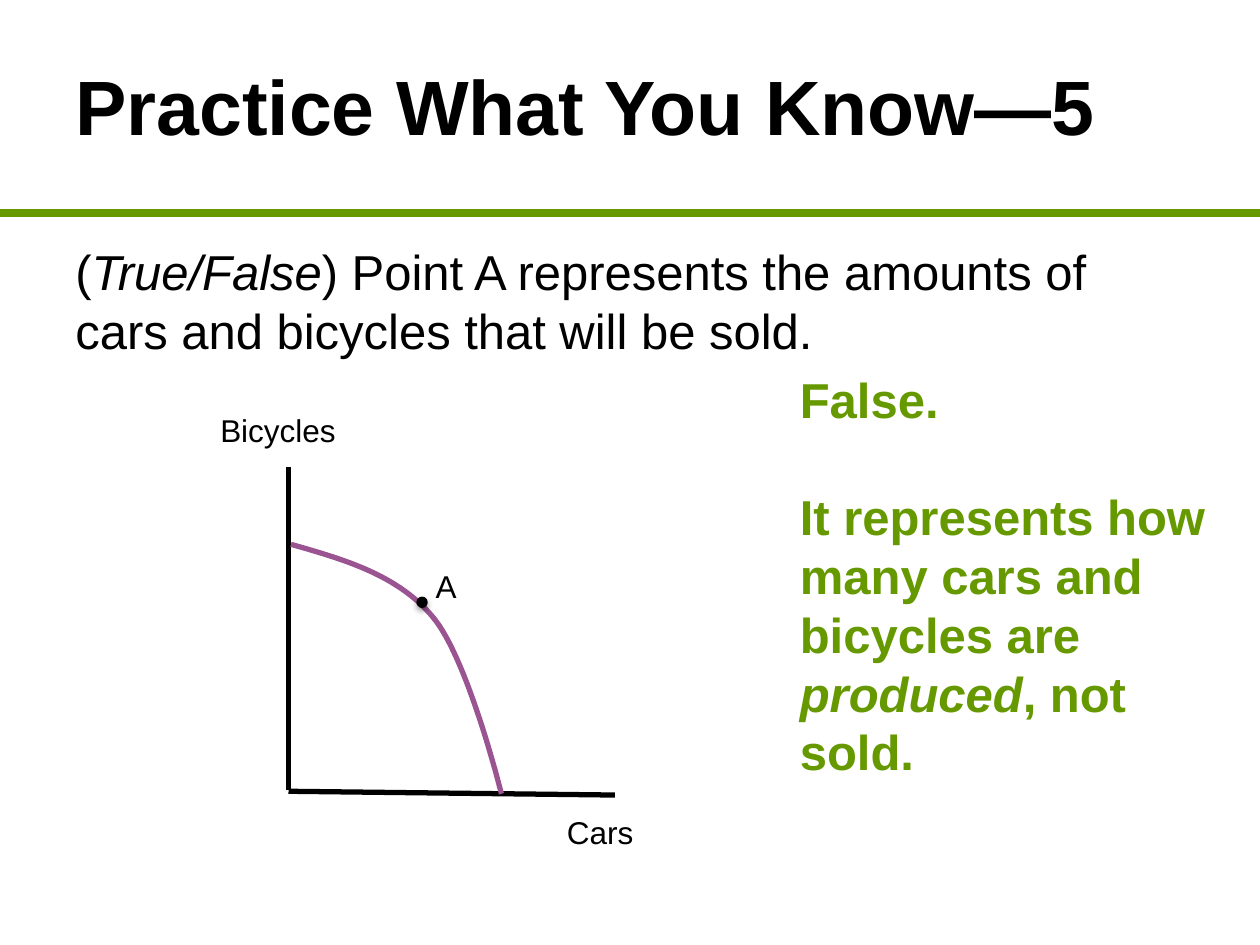
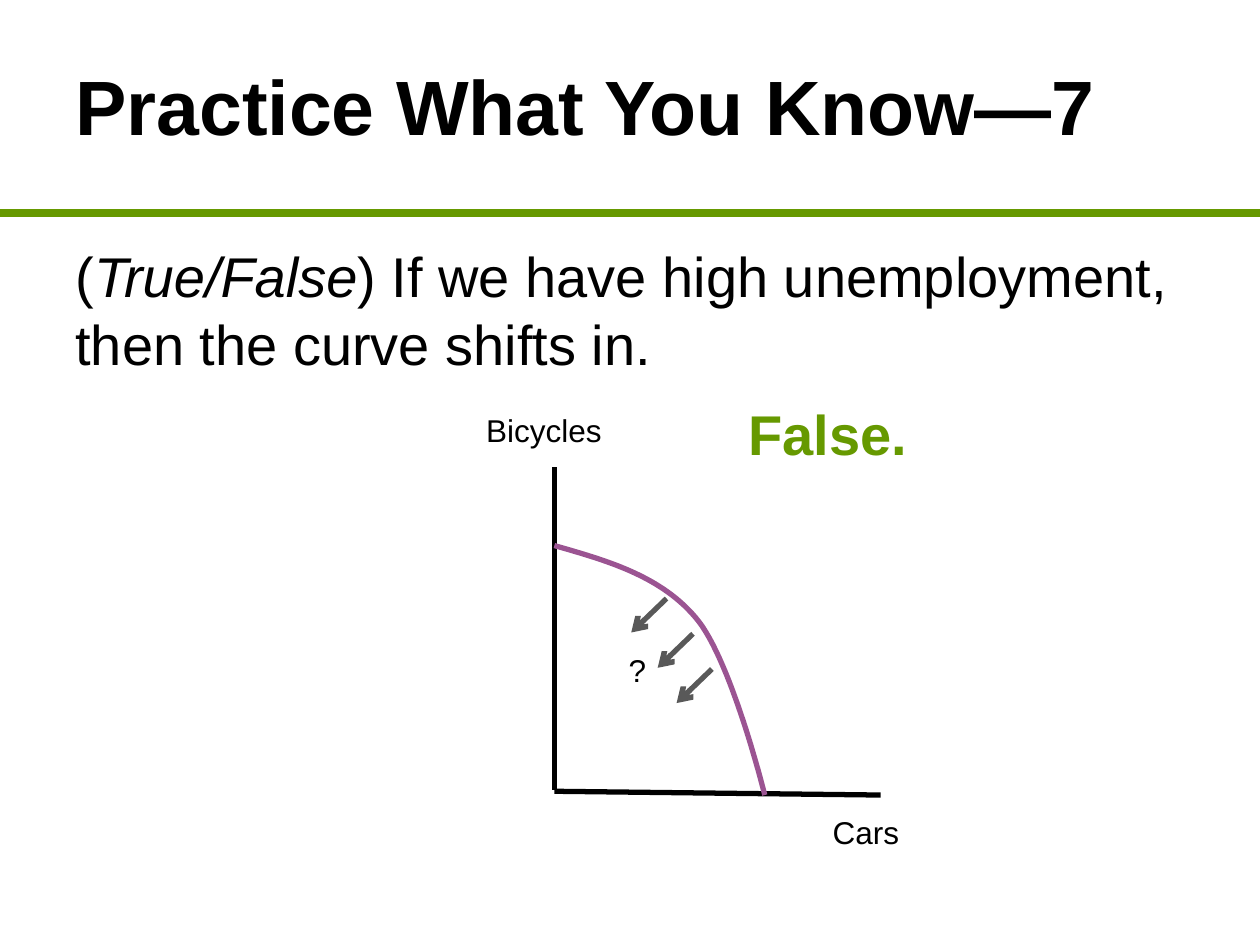
import pptx
import pptx.util
import pptx.dml.color
import pptx.enum.shapes
import pptx.enum.text
import pptx.oxml
import pptx.oxml.ns
from pptx.util import Inches

# Shared look
FONT = "Arial"
BLACK, GREEN, PURPLE, GREY = "000000", "669900", "9B5492", "595959"
SLIDE_W, SLIDE_H = 10, 7.5
MARGIN = 0.5
RULE_Y = 1.69
AXIS_TOP, AXIS_BOTTOM = 3.71, 6.27
CURVE_BEZIERS = [  # control points measured from the start of the curve
    [(0, 0), (0.42, 0.12), (0.84, 0.24), (1.12, 0.57)],
    [(1.12, 0.57), (1.4, 0.89), (1.67, 1.98), (1.67, 1.98)],
]
CURVE_STEPS = 30
ARROW_SHIFT = (-0.28, 0.27)

# Content: runs are (text, italic)
SLIDES = [
    {
        "title": "Practice What You Know—5",
        "question": [("(", False), ("True/False", True),
                     (") Point A represents the amounts of cars and bicycles "
                      "that will be sold.", False)],
        "question_height": 1.12,
        "text_size": 28,
        "answer": [[("False.", False)],
                   [("It represents how many cars and bicycles are ", False),
                    ("produced", True), (", not sold.", False)]],
        "answer_box": (6.25, 2.88, 3.72, 3.4),
        "axis_x": 2.29,
        "curve_start": (2.31, 4.32),
        "mark": ("A", (3.36, 4.45, 0.5, 0.51)),
        "point": (3.31, 4.74),
        "arrow_starts": [],
    },
    {
        "title": "Practice What You Know—7",
        "question": [("(", False), ("True/False", True),
                     (") If we have high unemployment, then the curve shifts in.",
                      False)],
        "question_height": 5.35,
        "text_size": 32,
        "answer": [[("False.", False)]],
        "answer_box": (5.84, 3.12, 3.72, 0.64),
        "axis_x": 4.4,
        "curve_start": (4.4, 4.33),
        "mark": ("?", (4.89, 5.12, 0.48, 0.51)),
        "point": None,
        "arrow_starts": [(5.29, 4.75), (5.5, 5.03), (5.65, 5.31)],
    },
]


def rgb(hex_string):
    return pptx.dml.color.RGBColor.from_string(hex_string)


def drawing_xml(tag, attributes="", inner=""):
    namespace = pptx.oxml.ns.nsdecls("a")
    return pptx.oxml.parse_xml(f"<a:{tag} {namespace} {attributes}>{inner}</a:{tag}>")


def add_text(slide, box, paragraphs, size, color=BLACK, bold=False,
             middle=False, gap=0):
    frame = slide.shapes.add_textbox(*map(Inches, box)).text_frame
    frame.word_wrap = True
    if middle:
        frame.vertical_anchor = pptx.enum.text.MSO_ANCHOR.MIDDLE
    for index, runs in enumerate(paragraphs):
        paragraph = frame.add_paragraph() if index else frame.paragraphs[0]
        if index:
            paragraph.space_before = pptx.util.Pt(gap)
        font = paragraph.font
        font.name, font.size, font.bold = FONT, pptx.util.Pt(size), bold
        font.color.rgb = rgb(color)
        for text, italic in runs:
            run = paragraph.add_run()
            run.text = text
            if italic:
                run.font.italic = True


def add_line(slide, start, end, color=BLACK, width=3, arrow=False):
    line = slide.shapes.add_connector(
        pptx.enum.shapes.MSO_CONNECTOR.STRAIGHT, *map(Inches, (*start, *end)))
    line.line.color.rgb = rgb(color)
    line.line.width = pptx.util.Pt(width)
    properties = line._element.spPr
    if arrow:
        outline = properties.find(pptx.oxml.ns.qn("a:ln"))
        outline.append(drawing_xml("tailEnd", 'type="arrow"'))
    properties.append(drawing_xml("effectLst"))


def bezier_point(controls, t):
    weights = ((1 - t) ** 3, 3 * t * (1 - t) ** 2, 3 * t * t * (1 - t), t ** 3)
    return tuple(sum(w * c[axis] for w, c in zip(weights, controls))
                 for axis in (0, 1))


def add_curve(slide, start):
    points = [bezier_point(controls, step / CURVE_STEPS)
              for controls in CURVE_BEZIERS
              for step in range(1, CURVE_STEPS + 1)]
    builder = slide.shapes.build_freeform(*map(Inches, start))
    builder.add_line_segments(
        [(Inches(start[0] + x), Inches(start[1] + y)) for x, y in points],
        close=False)
    curve = builder.convert_to_shape()
    curve.shadow.inherit = False
    curve.fill.background()
    curve.line.color.rgb = rgb(PURPLE)
    curve.line.width = pptx.util.Pt(3)


def add_point(slide, corner):
    point = slide.shapes.add_shape(pptx.enum.shapes.MSO_SHAPE.OVAL,
                                   *map(Inches, (*corner, 0.08, 0.08)))
    point.shadow.inherit = False
    point.fill.solid()
    point.fill.fore_color.rgb = rgb(BLACK)
    point.line.color.rgb = rgb(BLACK)
    point.line.width = pptx.util.Pt(0.75)
    # Soft shadow straight below the point
    effects = point._element.spPr.find(pptx.oxml.ns.qn("a:effectLst"))
    effects.append(drawing_xml(
        "outerShdw", 'blurRad="40000" dist="23000" dir="5400000" rotWithShape="0"',
        f'<a:srgbClr val="{BLACK}"><a:alpha val="35000"/></a:srgbClr>'))


def add_graph(slide, content):
    x = content["axis_x"]
    add_line(slide, (x, AXIS_TOP), (x, AXIS_BOTTOM))
    add_line(slide, (x + 2.59, AXIS_BOTTOM + 0.04), (x, AXIS_BOTTOM + 0.01))
    mark, mark_box = content["mark"]
    labels = [("Bicycles", (x - 0.64, 3.21, 1.4, 0.4)),
              ("Cars", (x + 2.11, 6.4, 0.82, 0.4)),
              (mark, mark_box)]
    for label, box in labels:
        add_text(slide, box, [[(label, False)]], 18)
    add_curve(slide, content["curve_start"])
    if content["point"]:
        add_point(slide, content["point"])
    for start in content["arrow_starts"]:
        end = (start[0] + ARROW_SHIFT[0], start[1] + ARROW_SHIFT[1])
        add_line(slide, start, end, GREY, arrow=True)


def build_slide(deck, content):
    slide = deck.slides.add_slide(deck.slide_layouts[6])
    size = content["text_size"]
    width = SLIDE_W - 2 * MARGIN
    # Title band
    add_line(slide, (0, RULE_Y), (SLIDE_W, RULE_Y), GREEN, 4.5)
    add_text(slide, (MARGIN, 0, width, 1.67), [[(content["title"], False)]],
             44, bold=True, middle=True)
    # Question, graph and answer
    add_text(slide, (MARGIN, 1.87, width, content["question_height"]),
             [content["question"]], size)
    add_graph(slide, content)
    add_text(slide, content["answer_box"], content["answer"], size, GREEN,
             bold=True, gap=size * 1.2)


def main():
    deck = pptx.Presentation()
    deck.slide_width, deck.slide_height = Inches(SLIDE_W), Inches(SLIDE_H)
    for content in SLIDES:
        build_slide(deck, content)
    deck.save("out.pptx")


if __name__ == "__main__":
    main()
